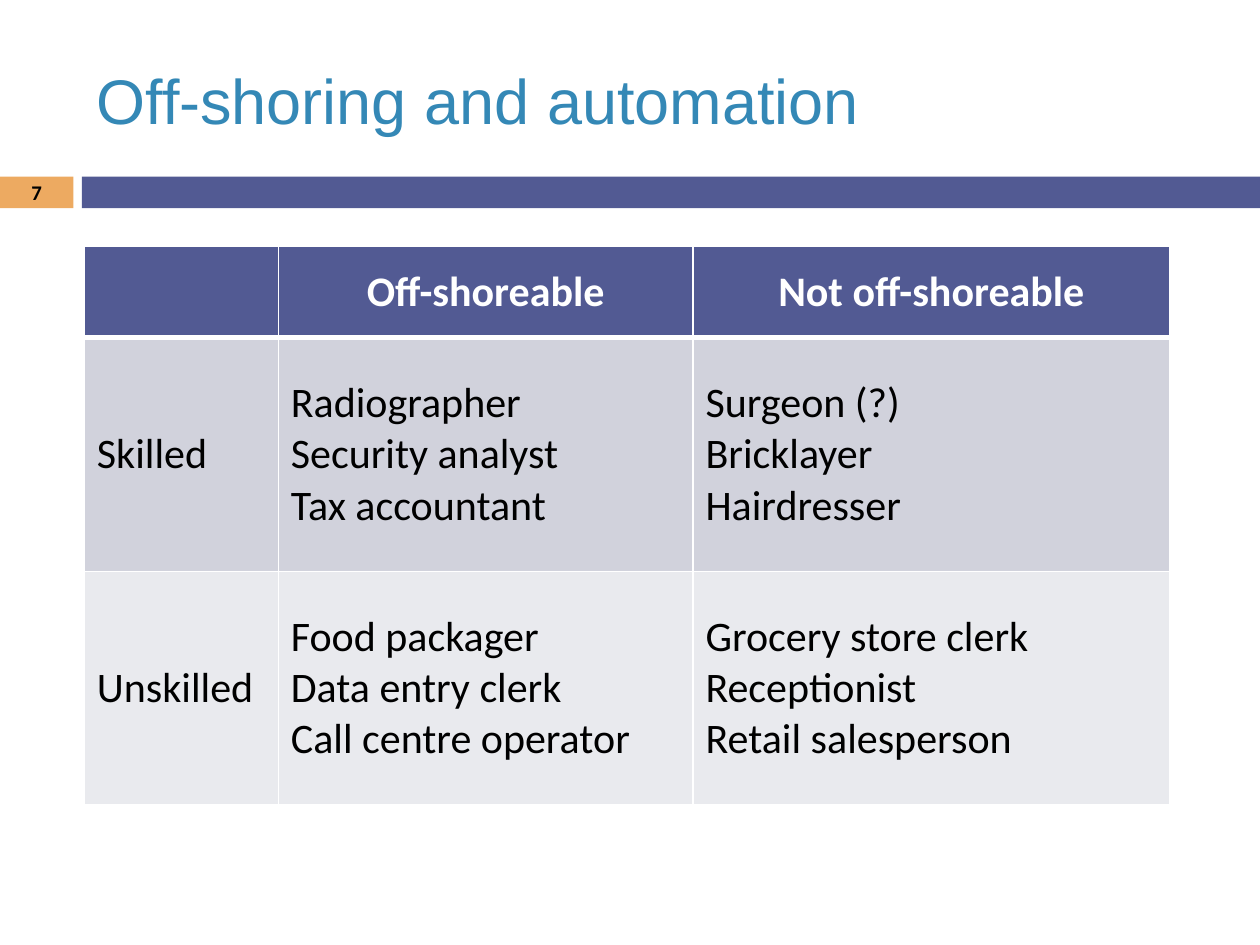
from dataclasses import dataclass

from lxml.etree import SubElement
from pptx import Presentation
from pptx.dml.color import RGBColor
from pptx.enum.shapes import MSO_SHAPE
from pptx.enum.text import MSO_ANCHOR, PP_ALIGN
from pptx.oxml.ns import qn
from pptx.util import Cm, Pt


@dataclass(frozen=True)
class Theme:
    title: str = "3488B6"
    accent: str = "EDAA61"
    header: str = "525A93"
    bands: tuple = ("D1D2DC", "E9EAEE")
    light: str = "FFFFFF"
    dark: str = "000000"
    title_font: str = "Arial"
    body_font: str = "Calibri"
    title_size: float = 36
    table_size: float = 24
    number_size: float = 11.9
    rule: float = 1
    header_rule: float = 3


THEME = Theme()
COLUMN_WIDTHS = (3.91, 8.36, 9.61)
ROW_HEIGHTS = (1.85, 4.71, 4.71)
JOBS = (
    ("", "Off-shoreable", "Not off-shoreable"),
    ("Skilled",
     "Radiographer\nSecurity analyst\nTax accountant",
     "Surgeon (?)\nBricklayer\nHairdresser"),
    ("Unskilled",
     "Food packager\nData entry clerk\nCall centre operator",
     "Grocery store clerk\nReceptionist\nRetail salesperson"),
)


def style_text(tf, font, size, color, bold=False, align=PP_ALIGN.LEFT):
    for p in tf.paragraphs:
        p.alignment = align
        p.font.name = font
        p.font.size = Pt(size)
        p.font.bold = bold
        p.font.color.rgb = RGBColor.from_string(color)


def add_bar(s, left, width, color):
    sp = s.shapes.add_shape(MSO_SHAPE.RECTANGLE, Cm(left), Cm(3.56), Cm(width), Cm(0.64))
    sp.shadow.inherit = False
    sp.fill.solid()
    sp.fill.fore_color.rgb = RGBColor.from_string(color)
    sp.line.fill.background()


def add_text(s, text, left, top, width, height, **style):
    tf = s.shapes.add_textbox(Cm(left), Cm(top), Cm(width), Cm(height)).text_frame
    tf.word_wrap = True
    tf.vertical_anchor = MSO_ANCHOR.MIDDLE
    tf.text = text
    style_text(tf, **style)


def set_borders(cell, top, bottom):
    tc_pr = cell._tc.get_or_add_tcPr()
    widths = {"lnL": THEME.rule, "lnR": THEME.rule, "lnT": top, "lnB": bottom}
    for side, width in widths.items():
        ln = SubElement(tc_pr, qn(f"a:{side}"), w=str(Pt(width)))
        fill = SubElement(ln, qn("a:solidFill"))
        SubElement(fill, qn("a:srgbClr"), val=THEME.light)


def fill_cell(cell, text, row):
    is_header = row == 0
    cell.text = text
    cell.vertical_anchor = MSO_ANCHOR.MIDDLE
    style_text(
        cell.text_frame, THEME.body_font, THEME.table_size,
        THEME.light if is_header else THEME.dark,
        bold=is_header,
        align=PP_ALIGN.CENTER if is_header else PP_ALIGN.LEFT,
    )
    set_borders(
        cell,
        top=THEME.header_rule if row == 1 else THEME.rule,
        bottom=THEME.header_rule if is_header else THEME.rule,
    )
    cell.fill.solid()
    color = THEME.header if is_header else THEME.bands[row - 1]
    cell.fill.fore_color.rgb = RGBColor.from_string(color)


def add_job_table(s, left, top):
    table = s.shapes.add_table(
        len(JOBS), len(COLUMN_WIDTHS), Cm(left), Cm(top),
        Cm(sum(COLUMN_WIDTHS)), Cm(sum(ROW_HEIGHTS)),
    ).table
    for column, width in zip(table.columns, COLUMN_WIDTHS):
        column.width = Cm(width)
    for i, (height, texts) in enumerate(zip(ROW_HEIGHTS, JOBS)):
        table.rows[i].height = Cm(height)
        for j, text in enumerate(texts):
            fill_cell(table.cell(i, j), text, i)


def main():
    prs = Presentation()
    prs.slide_width, prs.slide_height = Cm(25.4), Cm(19.05)
    s = prs.slides.add_slide(prs.slide_layouts[6])
    add_bar(s, 0, 1.48, THEME.accent)
    add_bar(s, 1.65, 23.75, THEME.header)
    add_text(s, "Off-shoring and automation", 1.7, 0.64, 22.66, 2.74,
             font=THEME.title_font, size=THEME.title_size, color=THEME.title)
    add_job_table(s, 1.7, 4.96)
    add_text(s, "7", 0, 3.54, 1.48, 0.68,
             font=THEME.body_font, size=THEME.number_size, color=THEME.dark,
             bold=True, align=PP_ALIGN.CENTER)
    prs.save("out.pptx")


if __name__ == "__main__":
    main()
